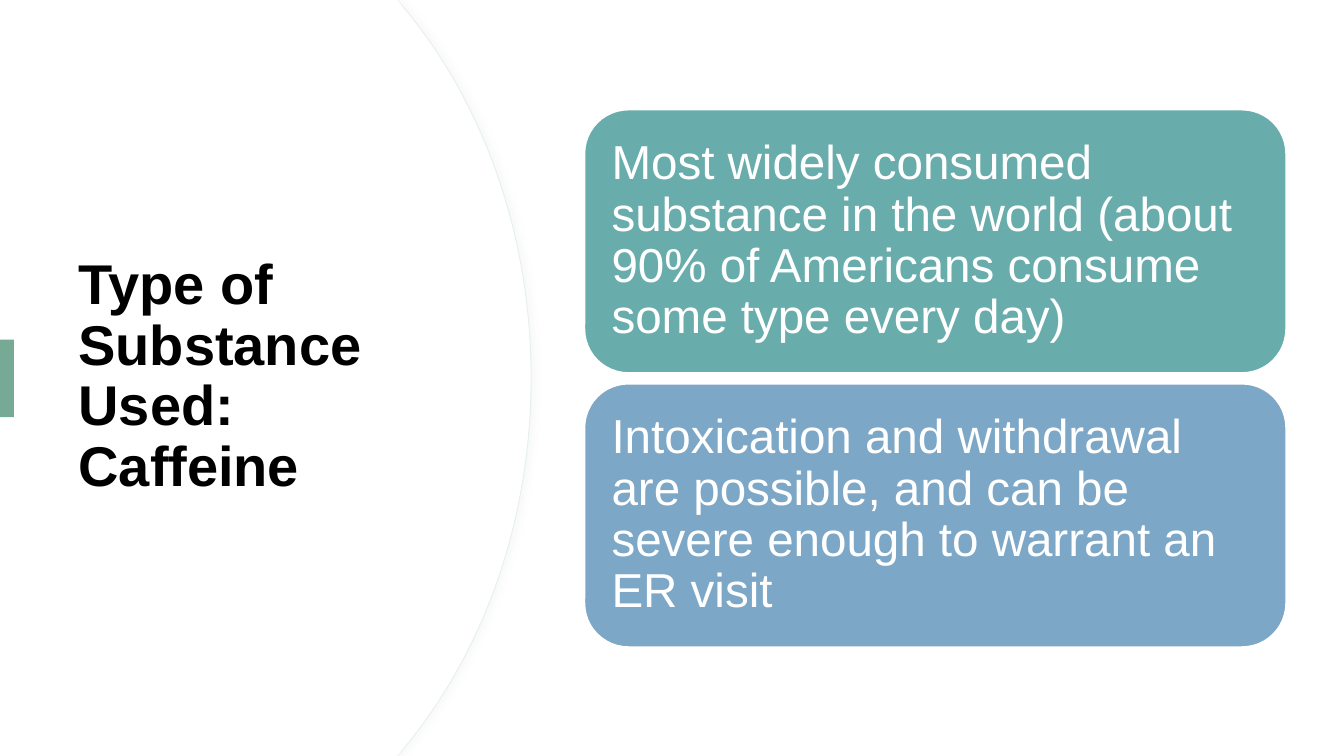
from lxml import etree
from pptx import Presentation
from pptx.dml import color
from pptx.enum import shapes, text
from pptx.oxml import ns
from pptx.util import Pt

WIDTH, HEIGHT = 960, 540
FONT = "Arial"


def rgb(value):
    return color.RGBColor.from_string(value)


def paint(shape, fill, line=None, weight=1):
    shape.shadow.inherit = False
    shape.fill.solid()
    shape.fill.fore_color.rgb = rgb(fill)
    if line:
        shape.line.color.rgb = rgb(line)
        shape.line.width = Pt(weight)
    else:
        shape.line.fill.background()


def write(shape, words, size, ink, bold=False, inset=7.2):
    frame = shape.text_frame
    frame.word_wrap = True
    frame.vertical_anchor = text.MSO_ANCHOR.MIDDLE
    frame.margin_left = frame.margin_right = Pt(inset)
    frame.margin_top = frame.margin_bottom = Pt(inset)
    paragraph = frame.paragraphs[0]
    paragraph.alignment = text.PP_ALIGN.LEFT
    paragraph.line_spacing = 0.9
    run = paragraph.add_run()
    run.text = words
    run.font.name = FONT
    run.font.size = Pt(size)
    run.font.bold = bold
    run.font.color.rgb = rgb(ink)


def add_block(slide, preset, left, top, width, height, fill, line=None):
    block = slide.shapes.add_shape(preset, Pt(left), Pt(top), Pt(width), Pt(height))
    paint(block, fill, line)
    return block


def bend(shape, first):
    corners = list(shape._element.iter(ns.qn("a:lnTo")))[first:first + 3]
    curve = etree.Element(ns.qn("a:cubicBezTo"))
    corners[0].addprevious(curve)
    for corner in corners:
        curve.append(corner[0])
        corner.getparent().remove(corner)


def add_curved_panel(slide, inset, line=None):
    upper = [(283.7, 0), (288.7 - inset, 5.8), (344.9 - inset, 73.4), (379.4 - inset, 167)]
    lower = [(x, HEIGHT - y) for x, y in reversed(upper)]
    outline = upper + [(379.4 - inset, HEIGHT / 2)] + lower + [(0, HEIGHT)]
    builder = slide.shapes.build_freeform(0, 0)
    builder.add_line_segments([(Pt(x), Pt(y)) for x, y in outline], close=True)
    panel = builder.convert_to_shape()
    for first in (5, 2):
        bend(panel, first)
    paint(panel, "FFFFFF", line, 0.75)
    return panel


def add_soft_shadow(shape, tint, opacity, blur, distance):
    effects = shape._element.spPr.find(ns.qn("a:effectLst"))
    shadow = etree.SubElement(effects, ns.qn("a:outerShdw"), blurRad=str(Pt(blur)),
                              dist=str(Pt(distance)), dir="0", algn="l", rotWithShape="0")
    shade = etree.SubElement(shadow, ns.qn("a:srgbClr"), val=tint)
    etree.SubElement(shade, ns.qn("a:alpha"), val=str(opacity * 1000))


def add_title(slide, words):
    title = slide.shapes.add_textbox(Pt(49), Pt(91.4), Pt(283.7), Pt(356.4))
    write(title, words, 40, "000000", bold=True)


def add_fact(slide, index, words, fill):
    fact = add_block(slide, shapes.MSO_SHAPE.ROUNDED_RECTANGLE,
                     417.6, 78.4 + index * 195.8, 501, 187.9, fill, "FFFFFF")
    write(fact, words, 34, "FFFFFF", inset=10.1)


def main():
    deck = Presentation()
    deck.slide_width, deck.slide_height = Pt(WIDTH), Pt(HEIGHT)
    slide = deck.slides.add_slide(deck.slide_layouts[6])
    add_block(slide, shapes.MSO_SHAPE.RECTANGLE, 0, 0, WIDTH, HEIGHT, "FFFFFF")
    rim = add_curved_panel(slide, 0, "E5F0F0")
    add_soft_shadow(rim, "D9D9D9", 15, 4, 3)
    add_curved_panel(slide, 0.6)
    add_title(slide, "Type of Substance Used: Caffeine")
    add_block(slide, shapes.MSO_SHAPE.RECTANGLE, 0, 242.6, 10, 55.4, "76AA95")
    facts = [
        ("Most widely consumed substance in the world "
         "(about 90% of Americans consume some type every day)", "69ACAC"),
        ("Intoxication and withdrawal are possible, "
         "and can be severe enough to warrant an ER visit", "7DA7C6"),
    ]
    for index, (words, fill) in enumerate(facts):
        add_fact(slide, index, words, fill)
    deck.save("out.pptx")


if __name__ == "__main__":
    main()
